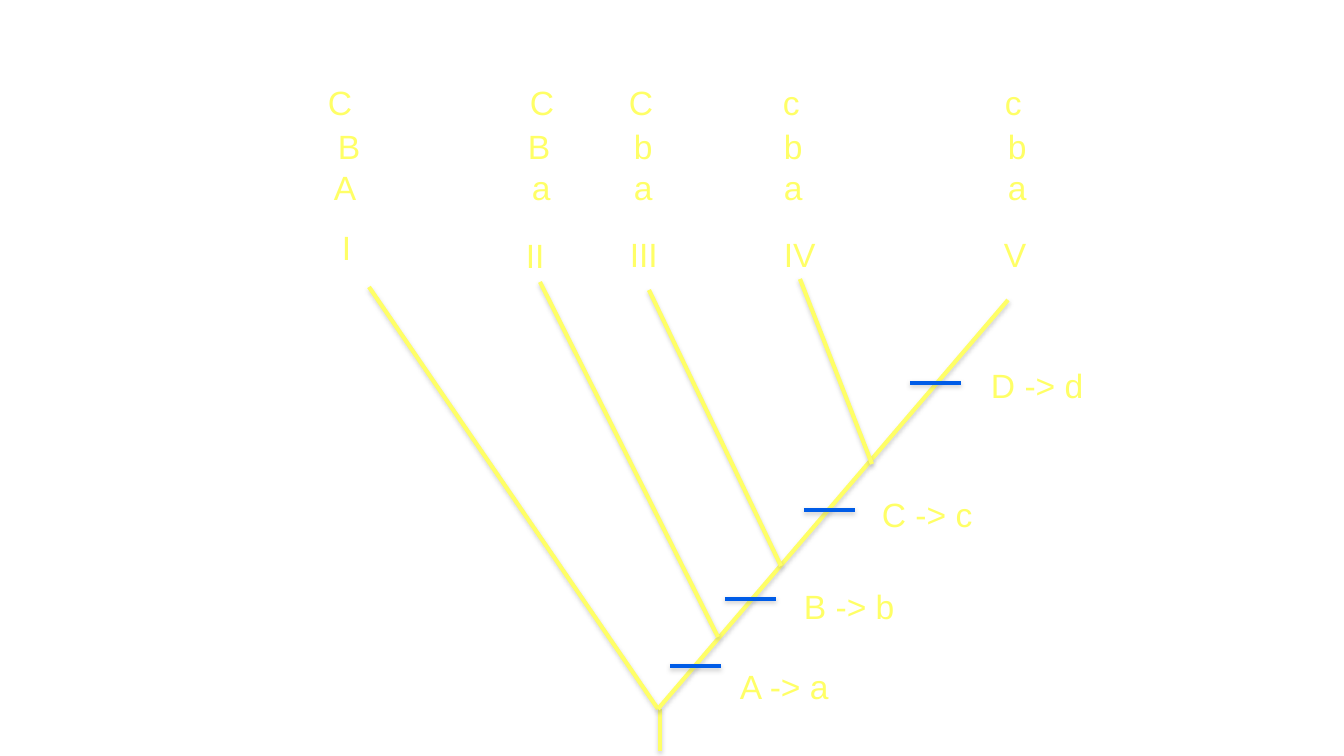
from lxml import etree
from pptx import Presentation
from pptx.dml.color import RGBColor
from pptx.enum.shapes import MSO_CONNECTOR
from pptx.enum.text import MSO_AUTO_SIZE
from pptx.oxml.ns import qn
from pptx.util import Pt

STRAIGHT = MSO_CONNECTOR.STRAIGHT
GROW = MSO_AUTO_SIZE.SHAPE_TO_FIT_TEXT
PX = 914400 / 100.8
COLORS = {"tree": "FFFF66", "change": "005CE7", "shadow": "808080"}
FONT, TEXT_SIZE, LINE_WIDTH = "Arial", Pt(24), Pt(3)
BOX_HEIGHT, INSET, MARK_WIDTH = 51, 10, 51

# Tree branches: start x, y, end x, y
ROOT = (658, 709)
BRANCHES = [
    (660, 751, 660, 709),
    (369, 287, *ROOT),
    (1008, 300, *ROOT),
    (718, 637, 540, 282),
    (781, 566, 649, 290),
    (872, 464, 800, 279),
]

# Taxa: name, left, top, width
TAXA = [
    ("I", 332, 222, 30),
    ("II", 516, 230, 39),
    ("III", 620, 229, 48),
    ("IV", 774, 229, 52),
    ("V", 994, 229, 43),
]

# Character changes: label, mark left and y, label left, top and width
CHANGES = [
    ("A -> a", (670, 666), (730, 661, 111)),
    ("B -> b", (725, 599), (794, 581, 112)),
    ("C -> c", (804, 510), (872, 489, 112)),
    ("D -> d", (910, 383), (981, 360, 114)),
]

# Character states: row top, one state per taxon, left edge of each state
STATES_LEFT, STATES_WIDTH = 298, 746
STATES = [
    (162, "Aaaaa", (334, 532, 634, 784, 1008)),
    (121, "BBbbb", (338, 528, 634, 784, 1008)),
    (77, "CCCcc", (328, 530, 629, 783, 1005)),
]


def emu(pixels):
    return round(pixels * PX)


def add_line(slide, start_x, start_y, end_x, end_y, color):
    connector = slide.shapes.add_connector(
        STRAIGHT, emu(start_x), emu(start_y), emu(end_x), emu(end_y))
    connector.line.color.rgb = RGBColor.from_string(COLORS[color])
    connector.line.width = LINE_WIDTH
    # Soft shadow straight below the line
    properties = connector.line._ln.getparent()
    effects = etree.SubElement(properties, qn("a:effectLst"))
    shadow = etree.SubElement(effects, qn("a:outerShdw"), blurRad="40000",
                              dist="23000", dir="5400000", rotWithShape="0")
    shade = etree.SubElement(shadow, qn("a:srgbClr"), val=COLORS["shadow"])
    etree.SubElement(shade, qn("a:alpha"), val="35000")


def add_text(slide, text, left, top, width, wrap=False):
    box = slide.shapes.add_textbox(emu(left), emu(top), emu(width), emu(BOX_HEIGHT))
    frame = box.text_frame
    frame.word_wrap = wrap
    frame.auto_size = GROW
    paragraph = frame.paragraphs[0]
    run = paragraph.add_run()
    run.text = text
    run.font.name = FONT
    run.font.size = TEXT_SIZE
    run.font.color.rgb = RGBColor.from_string(COLORS["tree"])
    return paragraph


def add_states(slide, top, states, lefts):
    text = "".join("\t" + state for state in states)
    paragraph = add_text(slide, text, STATES_LEFT, top, STATES_WIDTH, wrap=True)
    tabs = etree.SubElement(paragraph._p.get_or_add_pPr(), qn("a:tabLst"))
    for left in lefts:
        position = emu(left - STATES_LEFT - INSET)
        etree.SubElement(tabs, qn("a:tab"), pos=str(position), algn="l")


def main():
    presentation = Presentation()
    presentation.slide_width, presentation.slide_height = emu(1344), emu(756)
    slide = presentation.slides.add_slide(presentation.slide_layouts[6])

    # Tree and taxa
    for branch in BRANCHES:
        add_line(slide, *branch, "tree")
    for taxon in TAXA:
        add_text(slide, *taxon)

    # Changes along the main branch
    for label, (mark_left, mark_y), label_place in CHANGES:
        add_line(slide, mark_left, mark_y, mark_left + MARK_WIDTH, mark_y, "change")
        add_text(slide, label, *label_place)

    # States above the taxa
    for row in STATES:
        add_states(slide, *row)

    presentation.save("out.pptx")


if __name__ == "__main__":
    main()
